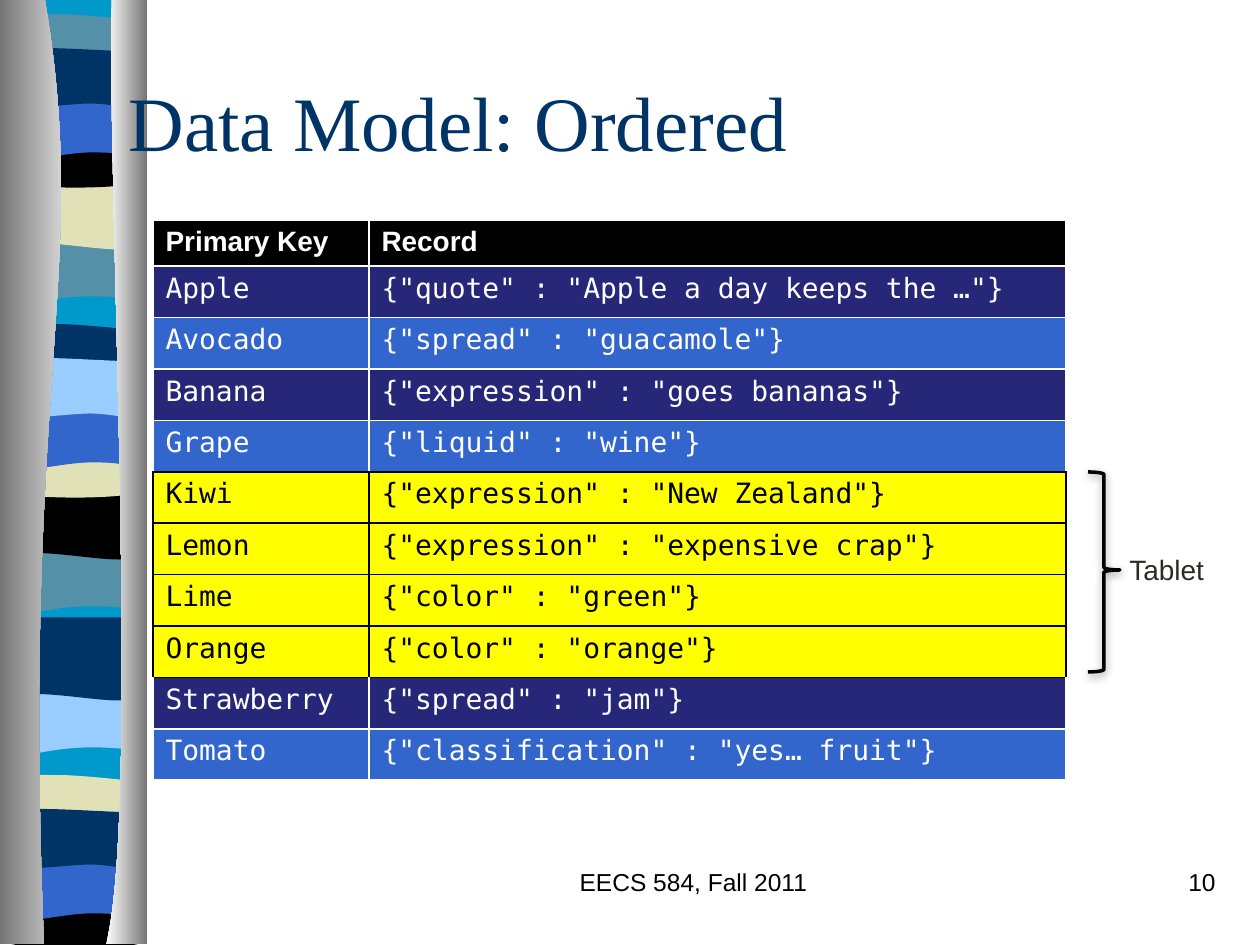
from lxml import etree
from pptx import Presentation
from pptx.dml.color import RGBColor
from pptx.enum.shapes import MSO_SHAPE
from pptx.enum.text import MSO_ANCHOR, PP_ALIGN
from pptx.oxml.ns import qn
from pptx.util import Pt

BRACE = MSO_SHAPE.RIGHT_BRACE
TOP, MIDDLE = MSO_ANCHOR.TOP, MSO_ANCHOR.MIDDLE
LEFT, CENTER, RIGHT = PP_ALIGN.LEFT, PP_ALIGN.CENTER, PP_ALIGN.RIGHT

SCALE = 914400 / 126
STRETCH = 4 / 3  # bands grow in height about their middle, so that they overlap
SERIF, SANS, MONO = "Times New Roman", "Arial", "DejaVu Sans Mono"
C = {
    "white": "FFFFFF", "black": "000000", "navy": "003366", "blue": "3366CC",
    "cyan": "0099CC", "teal": "5490A8", "cream": "E1E1B7", "sky": "99CCFF",
    "grey": "767676", "indigo": "272779", "yellow": "FFFF00", "brown": "2F2B20",
}

# Band edges from left to right: Bezier points, y relative to the edge's level
EDGES = {
    "flat": [(6, 0), (143, 0)],
    "dip": [(6, 0), (30, 10), (49, -10), (143, 0)],
    "swell": [(7, 0), (49, -7), (121, 10), (143, 0)],
    "sag": [(6, 0), (30, 6), (121, 6), (143, 0)],
    "drift": [(6, 0), (90, 6), (115, 0), (143, 0)],
    "lift": [(6, 0), (26, -6), (99, 0), (143, 0)],
    "crest": [(6, 0), (15, -6), (36, -5), (59, -5), (82, -5), (126, -1), (143, 0)],
    "arch": [(6, 0), (27, 0), (68, -7), (90, -7), (113, -7), (122, -7), (143, 0)],
    "ripple": [(6, 0), (21, 6), (68, 0), (90, 0), (113, 0), (134, 6), (143, 0)],
}
# Bands of one cycle, back to front: top, bottom, top edge, bottom edge
CYCLE = [
    (233, 292, "flat", "dip"), (178, 237, "flat", "swell"),
    (26, 57, "crest", "sag"), (136, 176, "drift", "sag"),
    (93, 152, "flat", "arch"), (58, 97, "lift", "ripple"),
]
# Each run of bands: offset, first band of the cycle, colours
RUNS = [
    (0, 0, ["teal", "cream", "teal", "black", "blue", "navy"]),
    (310, 0, ["teal", "black", "navy", "cream", "blue", "sky"]),
    (451, 0, ["sky", "navy"]),
    (761, 2, ["cream", "black", "blue", "navy"]),
]

ROWS = [
    ("Apple", '{"quote" : "Apple a day keeps the …"}'),
    ("Avocado", '{"spread" : "guacamole"}'),
    ("Banana", '{"expression" : "goes bananas"}'),
    ("Grape", '{"liquid" : "wine"}'),
    ("Kiwi", '{"expression" : "New Zealand"}'),
    ("Lemon", '{"expression" : "expensive crap"}'),
    ("Lime", '{"color" : "green"}'),
    ("Orange", '{"color" : "orange"}'),
    ("Strawberry", '{"spread" : "jam"}'),
    ("Tomato", '{"classification" : "yes… fruit"}'),
]
TABLET = range(5, 9)  # table rows that form the tablet


def px(n):
    return round(n * SCALE)


def rgb(name):
    return RGBColor.from_string(C[name])


def add_outline(shapes, *edges):
    """Join edges into a closed outline; edges of over two points are Beziers."""
    pts = [(px(x), px(y)) for edge in edges for x, y in edge]
    builder = shapes.build_freeform(*pts[0], scale=1.0)
    builder.add_line_segments(pts[1:], close=True)
    sp = builder.convert_to_shape()
    sp.shadow.inherit = False
    sp.line.fill.background()
    # Merge the control points of each Bezier into curve segments
    nodes = [None] + list(sp._element.iter(qn("a:lnTo")))
    start = 0
    for edge in edges:
        for i in range(start + 1, start + len(edge) - 2, 3):
            cubic = etree.Element(qn("a:cubicBezTo"))
            nodes[i].addprevious(cubic)
            for node in nodes[i:i + 3]:
                cubic.append(node[0])
                node.getparent().remove(node)
        start += len(edge)
    return sp


def add_band(shapes, top, bottom, top_edge, bottom_edge, color, stretch=STRETCH):
    edges = [[(x, y + level) for x, y in EDGES[name]]
             for name, level in ((top_edge, top), (bottom_edge, bottom))]
    levels = [y for edge in edges for _, y in edge]
    mid = (min(levels) + max(levels)) / 2
    upper, lower = ([(x, mid + (y - mid) * stretch) for x, y in edge]
                    for edge in edges)
    sp = add_outline(shapes, upper, lower[::-1])
    sp.fill.solid()
    sp.fill.fore_color.rgb = rgb(color)


def add_rod(shapes, curve, side, colors):
    sp = add_outline(shapes, curve, side)
    sp.fill.gradient()
    sp.fill.gradient_angle = 0
    for stop, color in zip(sp.fill.gradient_stops, colors):
        stop.color.rgb = rgb(color)


def add_ribbon(s):
    shapes = s.shapes.add_group_shape().shapes
    add_band(shapes, 0, 942, "flat", "flat", "cyan", stretch=1)
    for offset, first, colors in RUNS:
        for (top, bottom, *edges), color in zip(CYCLE[first:], colors):
            add_band(shapes, top + offset, bottom + offset, *edges, color)
    add_rod(shapes, [(45, 0), (91, 272), (21, 373), (44, 944)],
            [(0, 944), (0, 0)], ("grey", "white"))
    add_rod(shapes, [(112, 0), (106, 158), (141, 814), (106, 944)],
            [(147, 944), (147, 0)], ("white", "grey"))


def write(tf, text, size, font, color, align=LEFT, anchor=TOP, bold=False):
    tf.vertical_anchor = anchor
    p = tf.paragraphs[0]
    p.alignment = align
    r = p.add_run()
    r.text = text
    r.font.size, r.font.name, r.font.bold = Pt(size), font, bold
    r.font.color.rgb = rgb(color)


def add_text(s, box, *style, wrap=True):
    tf = s.shapes.add_textbox(*map(px, box)).text_frame
    tf.word_wrap = wrap
    write(tf, *style)


def set_title(s, text):
    title = s.shapes.title
    title.left, title.top, title.width, title.height = map(px, (116, 42, 1004, 157))
    write(title.text_frame, text, 44, SERIF, "navy", LEFT, MIDDLE)
    title._element.getparent().append(title._element)  # in front of the ribbon


def set_border(cell, side, color):
    ln = etree.SubElement(cell._tc.get_or_add_tcPr(), qn("a:ln" + side), w=str(Pt(1)))
    fill = etree.SubElement(ln, qn("a:solidFill"))
    etree.SubElement(fill, qn("a:srgbClr"), val=C[color])


def row_style(i):
    """Fill, text colour, font and weight of a table row."""
    if i == 0:
        return "black", "white", SANS, True
    if i in TABLET:
        return "yellow", "black", MONO, False
    return ("indigo" if i % 2 else "blue"), "white", MONO, False


def add_records(s):
    rows = [("Primary Key", "Record")] + ROWS
    table = s.shapes.add_table(len(rows), 2, *map(px, (153, 220, 913, 560))).table
    table.horz_banding = False
    table.columns[0].width, table.columns[1].width = px(216), px(697)
    for i, texts in enumerate(rows):
        table.rows[i].height = px(46) if i == 0 else px(514) // len(ROWS)
        fill, color, font, bold = row_style(i)
        # A line is black where it touches a tablet row
        touching = {"L": (i,), "R": (i,), "T": (i - 1, i), "B": (i, i + 1)}
        for cell, text in zip(table.rows[i].cells, texts):
            for side, near in touching.items():
                dark = any(n in TABLET for n in near)
                set_border(cell, side, "black" if dark else "white")
            cell.fill.solid()
            cell.fill.fore_color.rgb = rgb(fill)
            write(cell.text_frame, text, 16, font, color, bold=bold)


def add_brace(s):
    sp = s.shapes.add_shape(BRACE, *map(px, (1088, 472, 32, 200)))
    sp.adjustments[0], sp.adjustments[1] = 0.08, 0.49
    sp.fill.background()
    sp.line.color.rgb = rgb("black")
    sp.line.width = Pt(2)
    # Soft shadow below
    sp.shadow.inherit = False
    effects = sp._element.spPr.find(qn("a:effectLst"))
    shadow = etree.SubElement(effects, qn("a:outerShdw"), blurRad=str(Pt(5)),
                              dist=str(Pt(1.6)), dir="5400000", rotWithShape="0")
    shade = etree.SubElement(shadow, qn("a:srgbClr"), val=C["black"])
    etree.SubElement(shade, qn("a:alpha"), val="38000")


def main():
    prs = Presentation()
    prs.slide_width, prs.slide_height = px(1260), px(945)
    s = prs.slides.add_slide(prs.slide_layouts[5])

    add_ribbon(s)
    set_title(s, "Data Model: Ordered")

    # Footer
    add_text(s, (494, 861, 399, 63), "EECS 584, Fall 2011", 14, SANS, "black", CENTER)
    add_text(s, (966, 861, 262, 63), "10", 14, SANS, "black", RIGHT)

    # Tablet mark beside the records
    add_brace(s)
    add_text(s, (1117, 546, 101, 47), "Tablet", 16, SANS, "brown", wrap=False)
    add_records(s)

    prs.save("out.pptx")


if __name__ == "__main__":
    main()
